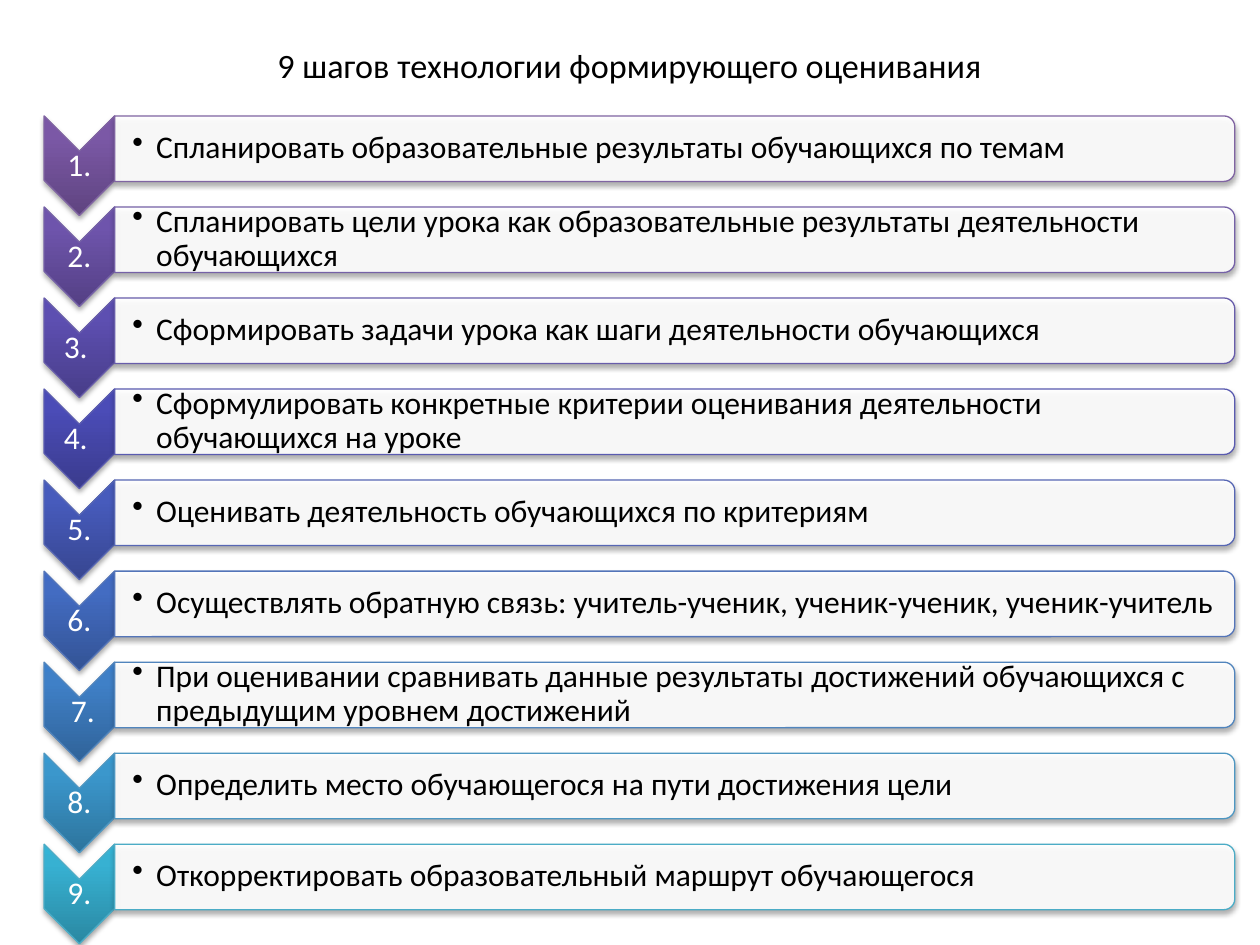
"""Build the slide with the nine steps of formative assessment."""
from dataclasses import dataclass

from pptx import Presentation
from pptx.dml.color import RGBColor
from pptx.enum.shapes import MSO_SHAPE as Shp
from pptx.enum.text import MSO_ANCHOR as Anchor, MSO_AUTO_SIZE as AutoSize, PP_ALIGN as Align
from pptx.oxml import parse_xml
from pptx.oxml.ns import nsdecls, qn
from pptx.util import Inches, Pt

BLACK = RGBColor(0x00, 0x00, 0x00)
WHITE = RGBColor(0xFF, 0xFF, 0xFF)
FONT = "Calibri"
TOP, PITCH = 0.92, 0.7225
CHEVRON_W, CHEVRON_H = 0.56, 0.79
BAR_LEFT, BAR_W, BAR_H = 0.91, 8.89, 0.52


@dataclass
class Step:
    number: str
    text: str
    dark: RGBColor
    mid: RGBColor
    light: RGBColor
    line: RGBColor


def step(number: str, text: str, *colors: str) -> Step:
    return Step(number, text, *map(RGBColor.from_string, colors))


STEPS = [
    step("1.", "Спланировать образовательные результаты обучающихся по темам",
         "5F4480", "7B58A6", "7C57A8", "8064A2"),
    step("2.", "Спланировать цели урока как образовательные результаты деятельности обучающихся",
         "544084", "6E54AC", "6D52AE", "7561A7"),
    step("3. ", "Сформировать задачи урока как шаги деятельности обучающихся",
         "483D89", "5D4FB1", "5C4EB4", "685DAB"),
    step("4. ", "Сформулировать конкретные критерии оценивания деятельности обучающихся на уроке",
         "3A3B8D", "4B4CB7", "494BBA", "5A5BB0"),
    step("5.", "Оценивать деятельность обучающихся по критериям",
         "374691", "475BBC", "455ABF", "5767B4"),
    step("6.", "Осуществлять обратную связь: учитель-ученик, ученик-ученик, ученик-учитель",
         "335395", "436CC2", "416BC5", "5475B9"),
    step(" 7.", "При оценивании сравнивать данные результаты достижений обучающихся "
         "с предыдущим уровнем достижений",
         "306399", "3F80C7", "3C80CB", "5185BD"),
    step("8.", "Определить место обучающегося на пути достижения цели",
         "2D749D", "3B97CC", "3899D0", "4E97C2"),
    step("9.", "Откорректировать образовательный маршрут обучающегося",
         "2A88A2", "37B1D2", "34B4D6", "4BACC6"),
]


def add_run(p, text: str, size: float, color: RGBColor) -> None:
    r = p.add_run()
    r.text = text
    r.font.name = FONT
    r.font.size = Pt(size)
    r.font.color.rgb = color


def add_turned(s, kind: Shp, left: float, top: float, w: float, h: float, line: RGBColor):
    """Add a shape turned by 90 degrees that covers the given box."""
    sp = s.shapes.add_shape(kind, Inches(left + (w - h) / 2), Inches(top + (h - w) / 2),
                            Inches(h), Inches(w))
    sp.rotation = 90
    sp.line.color.rgb = line
    sp.line.width = Pt(0.75)
    sp.shadow.inherit = False
    sp._element.spPr.find(qn("a:effectLst")).append(parse_xml(
        f'<a:outerShdw {nsdecls("a")} blurRad="{Pt(3.1)}" dist="{Pt(1.8)}" dir="5400000" '
        'rotWithShape="0"><a:srgbClr val="000000"><a:alpha val="35000"/></a:srgbClr>'
        '</a:outerShdw>'))
    return sp


def fill_gradient(sp, st: Step) -> None:
    sp.fill.gradient()
    spPr = sp._element.spPr
    stops = "".join(f'<a:gs pos="{pos}"><a:srgbClr val="{color}"/></a:gs>'
                    for pos, color in ((0, st.dark), (80000, st.mid), (100000, st.light)))
    spPr.replace(spPr.find(qn("a:gradFill")), parse_xml(
        f'<a:gradFill {nsdecls("a")} rotWithShape="0"><a:gsLst>{stops}</a:gsLst>'
        '<a:lin ang="16200000" scaled="0"/></a:gradFill>'))


def add_text(s, text: str, left: float, top: float, w: float, h: float,
             color: RGBColor, inset: float = 0.01):
    """Add a vertically centred text box and return its paragraph."""
    tf = s.shapes.add_textbox(Inches(left), Inches(top), Inches(w), Inches(h)).text_frame
    tf.word_wrap = True
    tf.vertical_anchor = Anchor.MIDDLE
    tf.margin_left = Inches(inset)
    tf.margin_right = tf.margin_top = tf.margin_bottom = Inches(0.01)
    p = tf.paragraphs[0]
    p.line_spacing = 0.9
    add_run(p, text, 18, color)
    return p


def add_step(s, st: Step, top: float) -> None:
    chevron = add_turned(s, Shp.CHEVRON, 0.35, top, CHEVRON_W, CHEVRON_H, st.line)
    fill_gradient(chevron, st)
    add_text(s, st.number, 0.35, top + 0.28, CHEVRON_W, 0.24, WHITE).alignment = Align.CENTER

    bar = add_turned(s, Shp.ROUND_2_SAME_RECTANGLE, BAR_LEFT, top, BAR_W, BAR_H, st.line)
    bar.fill.solid()
    bar.fill.fore_color.rgb = WHITE
    color = bar._element.spPr.find(qn("a:solidFill"))[0]
    color.append(parse_xml(f'<a:alpha {nsdecls("a")} val="90000"/>'))

    p = add_text(s, st.text, BAR_LEFT, top + 0.02, 8.87, 0.47, BLACK, 0.14)
    p.level = 1
    pPr = p._p.get_or_add_pPr()
    pPr.set("marL", str(Inches(0.19)))
    pPr.set("indent", str(-Inches(0.19)))
    pPr.append(parse_xml(f'<a:buChar {nsdecls("a")} char="•"/>'))


def add_title(s, text: str) -> None:
    title = s.shapes.title
    title.left, title.top = Inches(0.1), Inches(0.29)
    title.width, title.height = Inches(9.8), Inches(0.45)
    tf = title.text_frame
    tf.auto_size = AutoSize.NONE
    tf.vertical_anchor = Anchor.MIDDLE
    p = tf.paragraphs[0]
    p.alignment = Align.CENTER
    add_run(p, text, 19.5, BLACK)


def main() -> None:
    prs = Presentation()
    prs.slide_width, prs.slide_height = Inches(10), Inches(7.5)
    s = prs.slides.add_slide(prs.slide_layouts[5])
    add_title(s, "9 шагов технологии формирующего оценивания")
    for i, st in enumerate(STEPS):
        add_step(s, st, TOP + i * PITCH)
    prs.save("out.pptx")


if __name__ == "__main__":
    main()
